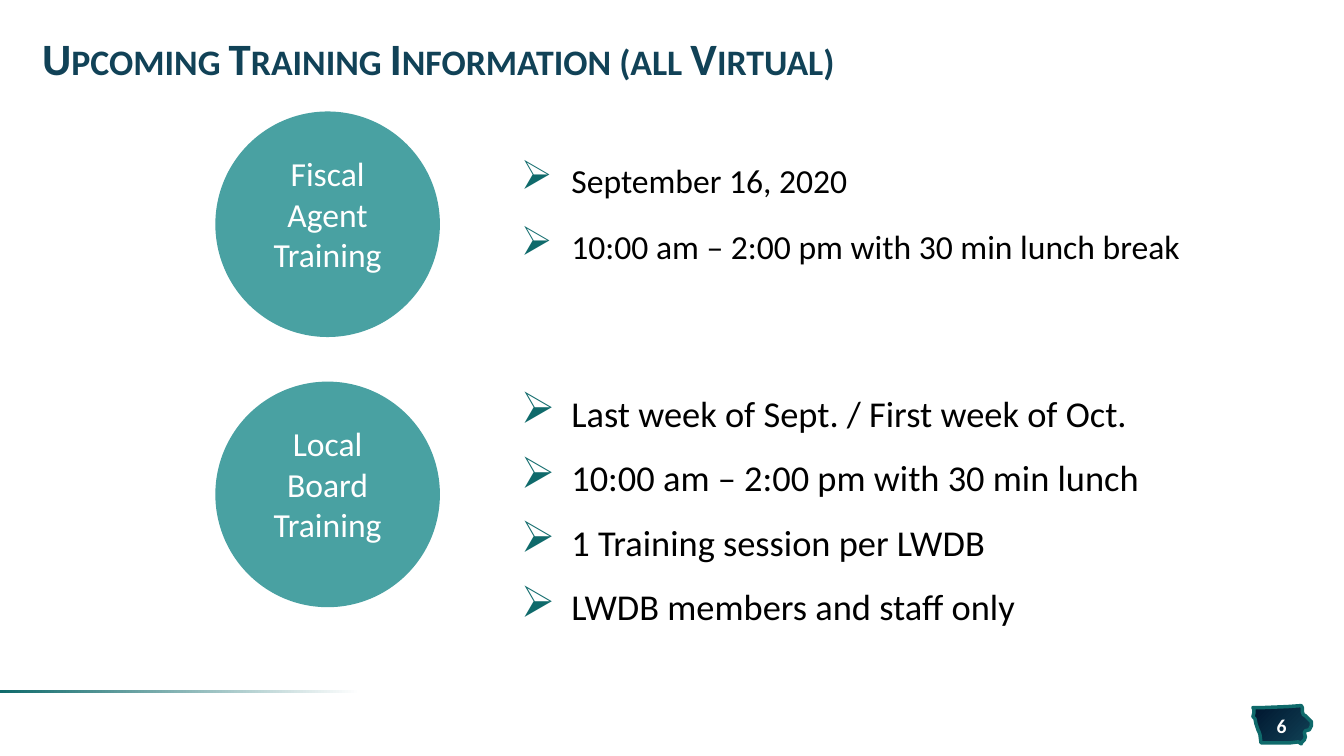
"""Build the upcoming training information slide."""
import lxml.etree
import pptx
import pptx.dml.color
import pptx.enum.shapes
import pptx.enum.text
import pptx.oxml.ns
import pptx.util

NAVY, MIDNIGHT, TEAL, AQUA = "114257", "00162E", "0F6A6B", "49A1A2"
WHITE, BLACK = "FFFFFF", "000000"
CENTER = pptx.enum.text.PP_ALIGN.CENTER
MIDDLE = pptx.enum.text.MSO_ANCHOR.MIDDLE

STATE_OUTLINE = [
    (48, 0), (34, 1), (10, 2), (0, 2), (1, 4), (1, 7), (0, 11), (2, 13),
    (3, 18), (5, 24), (6, 26), (7, 29), (8, 37), (37, 37), (45, 36),
    (48, 38), (48, 37), (51, 34), (52, 31), (51, 27), (52, 25), (56, 24),
    (58, 20), (58, 16), (54, 12), (52, 10), (50, 9), (49, 6), (49, 2),
]

TRAININGS = [
    {"label": ["Fiscal Agent", "Training"], "circle_row": 4.48,
     "details_row": 6.16, "details_rows": 6.04, "size": 24, "spacing": 1.0,
     "details": ["September 16, 2020",
                 "10:00 am – 2:00 pm with 30 min lunch break"]},
    {"label": ["Local Board", "Training"], "circle_row": 15.2,
     "details_row": 15.52, "details_rows": 10.16, "size": 26, "spacing": 0.9,
     "details": ["Last week of Sept. / First week of Oct.",
                 "10:00 am – 2:00 pm with 30 min lunch",
                 "1 Training session per LWDB",
                 "LWDB members and staff only"]},
]


def color(hex_value):
    """Turn a hex string into a colour."""
    return pptx.dml.color.RGBColor.from_string(hex_value)


def apply(target, values):
    """Set each named value on the target."""
    for name, value in values.items():
        setattr(target, name, value)


class TrainingSlide:
    """Hold the style and slide, and draw on a 40 by 30 grid."""

    font = "Calibri"
    columns, rows = 40, 30

    def __init__(self, deck):
        """Add a blank slide to the deck."""
        self.slide = deck.slides.add_slide(deck.slide_layouts[6])
        self.column = deck.slide_width / self.columns
        self.row = deck.slide_height / self.rows

    def place(self, left, top, width, height):
        """Turn grid units into slide lengths."""
        return [round(left * self.column), round(top * self.row),
                round(width * self.column), round(height * self.row)]

    def paint(self, shape, fill, line=None, weight=0, angle=0):
        """Fill with one colour or gradient stops, and set the outline."""
        shape.shadow.inherit = False
        if isinstance(fill, str):
            shape.fill.solid()
            shape.fill.fore_color.rgb = color(fill)
        else:
            shape.fill.gradient()
            shape.fill.gradient_angle = angle
            for stop, (position, hex_value) in zip(shape.fill.gradient_stops, fill):
                apply(stop, {"position": position})
                stop.color.rgb = color(hex_value)
        if line:
            shape.line.color.rgb = color(line)
            shape.line.width = pptx.util.Pt(weight)
        else:
            shape.line.fill.background()

    def shape(self, kind, box, **paint):
        """Draw a preset shape."""
        self.paint(self.slide.shapes.add_shape(kind, *self.place(*box)), **paint)

    def outline(self, points, extent, box, **paint):
        """Draw a closed outline stretched from its extent to the box."""
        left, top, width, height = self.place(*box)
        builder = self.slide.shapes.build_freeform(
            *points[0], scale=(width / extent[0], height / extent[1]))
        builder.add_line_segments(points[1:], close=True)
        self.paint(builder.convert_to_shape(left, top), **paint)

    def text(self, lines, box, size, hex_value, bold=False, frame=None,
             paragraph=None, run=None, gap=0, bullet=None):
        """Write paragraphs in a wrapped text box."""
        text_frame = self.slide.shapes.add_textbox(*self.place(*box)).text_frame
        apply(text_frame, {"word_wrap": True, **(frame or {})})
        for index, line in enumerate(lines):
            item = text_frame.paragraphs[0] if index == 0 else text_frame.add_paragraph()
            if bullet:
                self.bullet(item, bullet)
            apply(item, paragraph or {})
            if index and gap:
                item.space_before = pptx.util.Pt(gap)
            piece = item.add_run()
            piece.text = line
            apply(piece.font, {"name": self.font, "size": pptx.util.Pt(size), "bold": bold})
            piece.font.color.rgb = color(hex_value)
            for name, value in (run or {}).items():
                piece.font._element.set(name, value)

    def bullet(self, paragraph, mark):
        """Give a paragraph a teal bullet and a hanging indent."""
        properties = paragraph._p.get_or_add_pPr()
        indent = pptx.util.Inches(0.5)
        properties.set("marL", str(indent))
        properties.set("indent", str(-indent))
        qn = pptx.oxml.ns.qn
        tint = lxml.etree.SubElement(properties, qn("a:buClr"))
        lxml.etree.SubElement(tint, qn("a:srgbClr"), val=TEAL)
        lxml.etree.SubElement(properties, qn("a:buSzPct"), val="120000")
        lxml.etree.SubElement(properties, qn("a:buChar"), char=mark)


def main():
    """Draw the slide and save it."""
    deck = pptx.Presentation()
    deck.slide_width = pptx.util.Inches(13.33)
    deck.slide_height = pptx.util.Inches(7.5)
    page = TrainingSlide(deck)
    shapes = pptx.enum.shapes.MSO_SHAPE

    page.outline(STATE_OUTLINE, (58, 38), (37.29, 28, 1.74, 1.52),
                 fill=[(0, MIDNIGHT), (1, NAVY)], angle=315, line=TEAL, weight=2.5)
    page.shape(shapes.RECTANGLE, (0, 27.4, 11.4, 0.12),
               fill=[(0.06, WHITE), (1, TEAL)], angle=180)
    page.text(["6"], (37.38, 28.32, 1.53, 0.92), 14, WHITE, bold=True,
              frame={"vertical_anchor": MIDDLE, "margin_left": 0, "margin_right": 0},
              paragraph={"alignment": CENTER}, run={"spc": "50"})
    page.text(["Upcoming Training Information (all Virtual)"],
              (0.96, 0.96, 38.07, 3), 32, NAVY, bold=True,
              frame={"vertical_anchor": MIDDLE},
              paragraph={"line_spacing": 0.85}, run={"cap": "small"})

    for training in TRAININGS:
        circle_row = training["circle_row"]
        page.text(training["details"],
                  (15.21, training["details_row"], 20.67, training["details_rows"]),
                  training["size"], BLACK, gap=18, bullet="➢",
                  paragraph={"line_spacing": training["spacing"]})
        page.shape(shapes.OVAL, (6.45, circle_row, 6.6, 8.84),
                   fill=AQUA, line=AQUA, weight=2)
        page.text(training["label"], (7.38, circle_row + 1.4, 4.74, 5.24),
                  24, WHITE, paragraph={"alignment": CENTER})

    deck.save("out.pptx")


if __name__ == "__main__":
    main()
